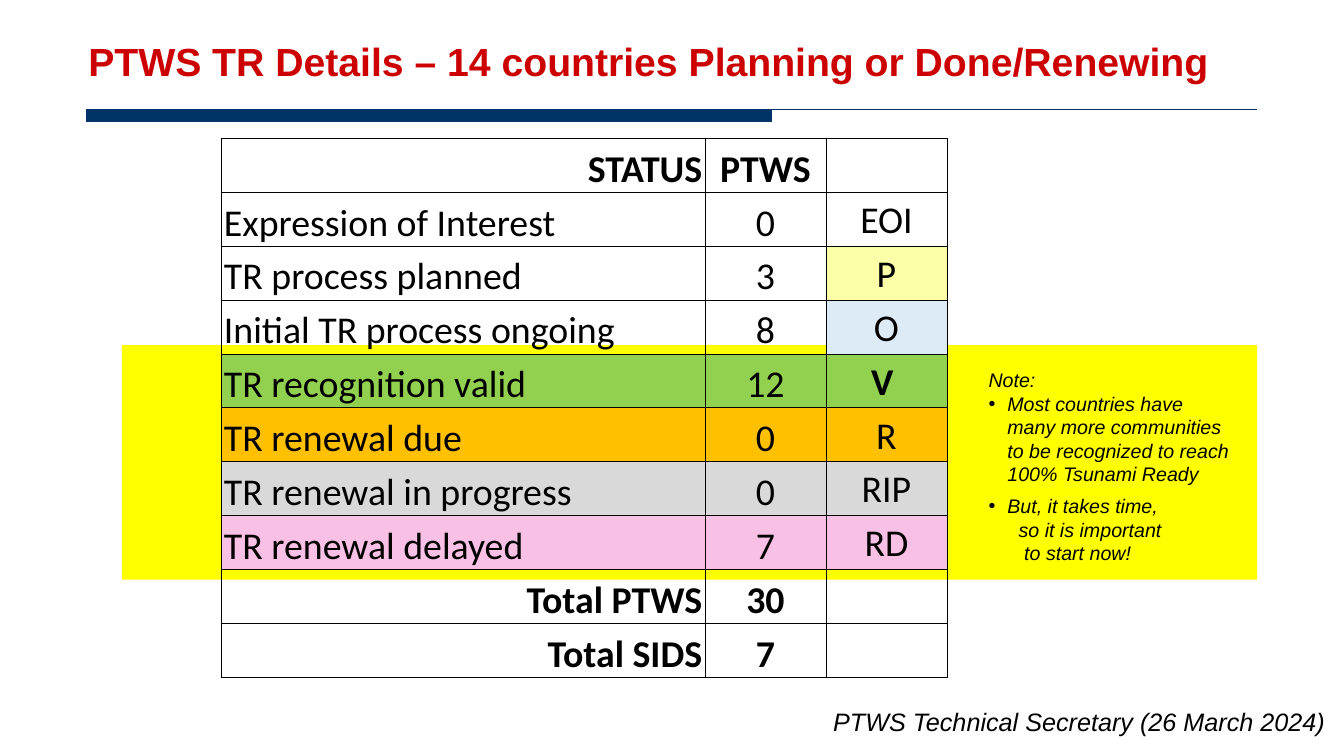
from lxml import etree
from pptx import Presentation
from pptx.dml.color import RGBColor
from pptx.enum import shapes, text
from pptx.oxml import ns
from pptx.util import Pt

COLORS = {
    "title": "CC0000", "navy": "003366", "ink": "000000", "band": "FFFF00",
    "planned": "FAFFA8", "ongoing": "DDEBF7", "valid": "92D050",
    "due": "FFC000", "progress": "D9D9D9", "delayed": "F9C0E6",
}
ALIGN = {"l": text.PP_ALIGN.LEFT, "c": text.PP_ALIGN.CENTER, "r": text.PP_ALIGN.RIGHT}
BOTTOM, MIDDLE = text.MSO_ANCHOR.BOTTOM, text.MSO_ANCHOR.MIDDLE

# label, count, code, colour, whether the whole row is coloured
STATUSES = [
    ("Expression of Interest", "0", "EOI", None, False),
    ("TR process planned", "3", "P", "planned", False),
    ("Initial TR process ongoing", "8", "O", "ongoing", False),
    ("TR recognition valid", "12", "V ", "valid", True),
    ("TR renewal due", "0", "R", "due", True),
    ("TR renewal in progress", "0", "RIP", "progress", True),
    ("TR renewal delayed", "7", "RD", "delayed", True),
]
# text, left margin, first-line indent, space before
NOTES = [
    ("Note:", 0, 0, 0),
    ("Most countries have many more communities to be recognized "
     "to reach 100% Tsunami Ready", 13.5, -13.5, 0),
    ("But, it takes time,", 13.5, -13.5, 6),
    ("so it is important", 21.5, 0, 0),
    ("to start now!", 25.5, 0, 0),
]


def rgb(name):
    return RGBColor.from_string(COLORS[name])


def add_run(p, words, color="ink", **font):
    r = p.add_run()
    r.text = words
    r.font.color.rgb = rgb(color)
    for key, value in font.items():
        setattr(r.font, key, value)


def add_text_frame(s, box):
    tf = s.shapes.add_textbox(*map(Pt, box)).text_frame
    tf.word_wrap = True
    return tf


def add_title(s, box):
    tf = add_text_frame(s, box)
    tf.vertical_anchor = BOTTOM
    p = tf.paragraphs[0]
    p.line_spacing = 1.1
    add_run(p, "PTWS TR Details – 14 countries Planning or Done/Renewing",
            "title", name="Arial", size=Pt(28), bold=True)


def add_rule(s, box, bar_width):
    """Thick bar whose top edge runs on as a thin line to the box's right."""
    x, y, w, h = box
    builder = s.shapes.build_freeform(x, y, scale=Pt(1))
    builder.add_line_segments(
        [(x + bar_width, y), (x + bar_width, y + h), (x, y + h)], close=True)
    builder.move_to(x, y)
    builder.add_line_segments([(x + w, y)], close=False)
    sp = builder.convert_to_shape()
    sp.shadow.inherit = False
    sp.fill.solid()
    sp.fill.fore_color.rgb = sp.line.color.rgb = rgb("navy")
    sp.line.width = Pt(0.75)


def add_band(s, box):
    sp = s.shapes.add_shape(shapes.MSO_SHAPE.RECTANGLE, *map(Pt, box))
    sp.shadow.inherit = False
    sp.fill.solid()
    sp.fill.fore_color.rgb = rgb("band")
    sp.line.fill.background()


def add_borders(cell):
    tc_pr = cell._tc.get_or_add_tcPr()
    for i, side in enumerate(("lnL", "lnR", "lnT", "lnB")):
        ln = etree.Element(ns.qn("a:" + side), w=str(Pt(0.5)))
        fill = etree.SubElement(ln, ns.qn("a:solidFill"))
        etree.SubElement(fill, ns.qn("a:srgbClr"), val=COLORS["ink"])
        tc_pr.insert(i, ln)


def fill_cell(cell, words, align, anchor, color, bold):
    margins = {"margin_left": 2, "margin_right": 2, "margin_top": 2, "margin_bottom": 0}
    for key, value in margins.items():
        setattr(cell, key, Pt(value))
    cell.vertical_anchor = anchor
    if color:
        cell.fill.solid()
        cell.fill.fore_color.rgb = rgb(color)
    else:
        cell.fill.background()
    add_borders(cell)
    if words:
        p = cell.text_frame.paragraphs[0]
        p.alignment = ALIGN[align]
        add_run(p, words, name="Calibri", size=Pt(27), bold=bold)


def add_status_table(s, box):
    rows = [("STATUS", "PTWS", "", None, False), *STATUSES,
            ("Total PTWS", "30", "", None, False),
            ("Total SIDS", "7", "", None, False)]
    table = s.shapes.add_table(len(rows), 3, *map(Pt, box)).table
    table.first_row = table.horz_banding = False
    code_width = box[2] / 6
    for col, width in zip(table.columns, (box[2] - 2 * code_width, code_width, code_width)):
        col.width = Pt(width)
    for i, (label, count, code, color, whole) in enumerate(rows):
        table.rows[i].height = Pt(box[3] / len(rows))
        summary = not code
        row_color = color if whole else None
        fill_cell(table.cell(i, 0), label, "r" if summary else "l", BOTTOM, row_color, summary)
        fill_cell(table.cell(i, 1), count, "c", BOTTOM, row_color, summary)
        fill_cell(table.cell(i, 2), code, "c", MIDDLE, color, color == "valid")


def add_note(s, box):
    tf = add_text_frame(s, box)
    for i, (words, margin, indent, before) in enumerate(NOTES):
        p = tf.add_paragraph() if i else tf.paragraphs[0]
        p.space_before = Pt(before)
        p_pr = p._p.get_or_add_pPr()
        p_pr.set("marL", str(Pt(margin)))
        p_pr.set("indent", str(Pt(indent)))
        if indent:
            etree.SubElement(p_pr, ns.qn("a:buFont"), typeface="Arial")
            etree.SubElement(p_pr, ns.qn("a:buChar"), char="•")
        add_run(p, words, name="Arial", size=Pt(14), italic=True)


def add_footer(s, box):
    p = add_text_frame(s, box).paragraphs[0]
    add_run(p, "PTWS Technical Secretary (26 March 2024)",
            name="Arial", size=Pt(18), italic=True)


def main():
    prs = Presentation()
    prs.slide_width, prs.slide_height = Pt(960), Pt(540)
    s = prs.slides.add_slide(prs.slide_layouts[6])
    add_rule(s, (62, 78, 836, 9), 489)
    add_band(s, (87, 246.5, 811, 167.5))
    add_title(s, (56, 4, 942, 60))
    add_footer(s, (588, 501, 381, 29))
    add_status_table(s, (158, 98.8, 518.4, 385))
    add_note(s, (699, 259.5, 186.5, 149))
    prs.save("out.pptx")


if __name__ == "__main__":
    main()
